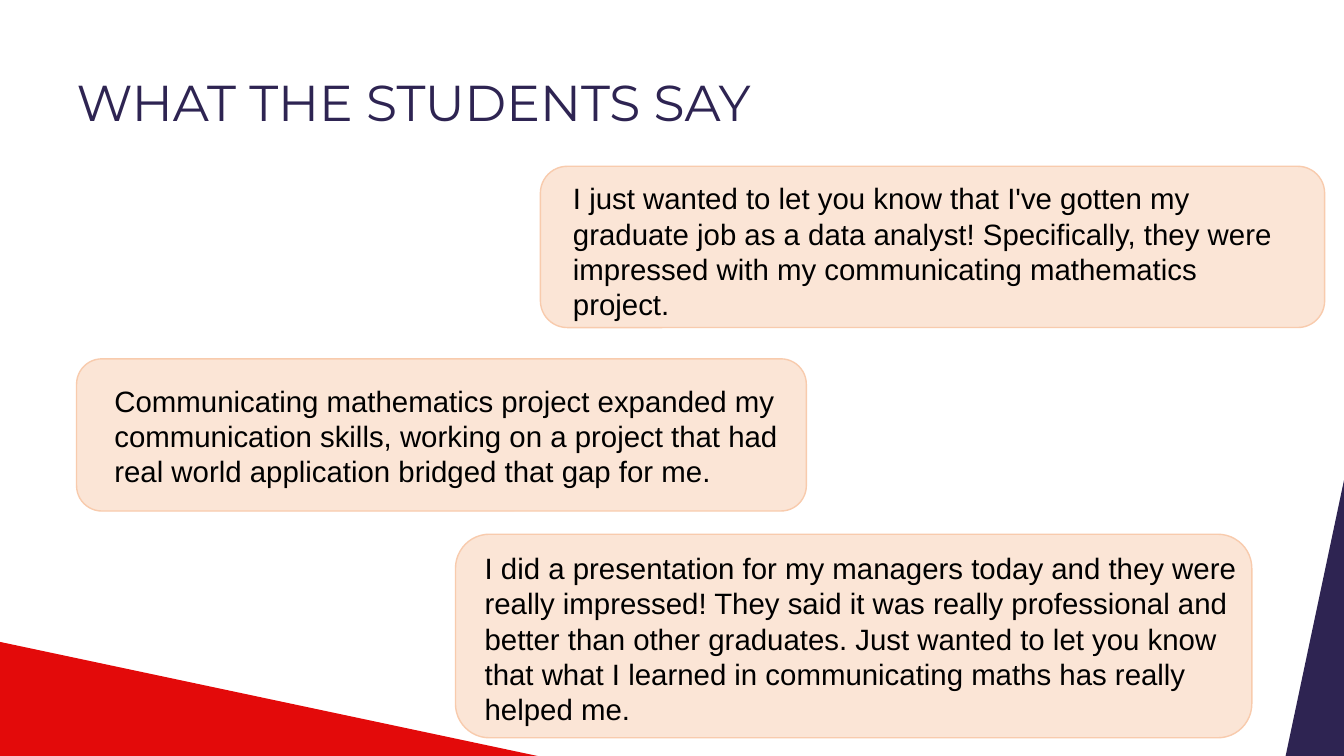
from dataclasses import dataclass

from pptx import Presentation
from pptx.dml.color import RGBColor
from pptx.enum.shapes import MSO_SHAPE
from pptx.enum.text import MSO_ANCHOR, MSO_AUTO_SIZE, PP_ALIGN
from pptx.slide import Slide
from pptx.text.text import TextFrame
from pptx.util import Pt


@dataclass(frozen=True)
class Theme:
    navy: str = "2E2452"
    red: str = "E30A0A"
    card: str = "FBE5D6"
    card_line: str = "F8CBAD"
    ink: str = "000000"
    title_font: str = "Montserrat"
    body_font: str = "Arial"
    title_size: float = 36
    body_size: float = 21


@dataclass(frozen=True)
class Box:
    left: float
    top: float
    width: float
    height: float

    def lengths(self) -> tuple[Pt, Pt, Pt, Pt]:
        return Pt(self.left), Pt(self.top), Pt(self.width), Pt(self.height)


@dataclass(frozen=True)
class Wedge:
    points: tuple[tuple[float, float], ...]
    color: str


@dataclass(frozen=True)
class Quote:
    card: Box
    text_box: Box
    text: str


THEME = Theme()
WIDTH, HEIGHT = 960, 540
TITLE_BOX = Box(54.7, 34.6, 800, 59.8)

WEDGES = (
    Wedge(((0, 458.5), (384, HEIGHT), (0, HEIGHT)), THEME.red),
    Wedge(((WIDTH, 343), (WIDTH, HEIGHT), (918.3, HEIGHT)), THEME.navy),
)

QUOTES = (
    Quote(
        Box(386, 118.8, 560.2, 115.2),
        Box(402.2, 125.3, 521.3, 108.7),
        "I just wanted to let you know that I've gotten my graduate job as a data "
        "analyst! Specifically, they were impressed with my communicating "
        "mathematics project.",
    ),
    Quote(
        Box(54.7, 256.3, 521.3, 108.7),
        Box(74.6, 270, 501.8, 83.5),
        "Communicating mathematics project expanded my communication skills, "
        "working on a project that had real world application bridged that gap "
        "for me.",
    ),
    Quote(
        Box(325.4, 381.6, 568.8, 145.4),
        Box(339.1, 389.5, 568.8, 134.6),
        "I did a presentation for my managers today and they were really "
        "impressed! They said it was really professional and better than other "
        "graduates. Just wanted to let you know that what I learned in "
        "communicating maths has really helped me.",
    ),
)


def write(tf: TextFrame, text: str, *, font: str, size: float, color: str,
          spacing: float = 1.0) -> None:
    tf.word_wrap = True
    p = tf.paragraphs[0]
    p.alignment = PP_ALIGN.LEFT
    p.line_spacing = spacing
    r = p.add_run()
    r.text = text
    r.font.name = font
    r.font.size = Pt(size)
    r.font.color.rgb = RGBColor.from_string(color)


def draw_wedge(s: Slide, wedge: Wedge) -> None:
    start, *rest = [(Pt(x), Pt(y)) for x, y in wedge.points]
    builder = s.shapes.build_freeform(*start)
    builder.add_line_segments(rest, close=True)
    sp = builder.convert_to_shape()
    sp.shadow.inherit = False
    sp.fill.solid()
    sp.fill.fore_color.rgb = RGBColor.from_string(wedge.color)
    sp.line.fill.background()


def draw_title(s: Slide, text: str) -> None:
    sp = s.shapes.title
    sp.left, sp.top, sp.width, sp.height = TITLE_BOX.lengths()
    tf = sp.text_frame
    tf.auto_size = MSO_AUTO_SIZE.NONE
    tf.vertical_anchor = MSO_ANCHOR.BOTTOM
    tf.margin_left = tf.margin_top = tf.margin_right = tf.margin_bottom = Pt(0)
    write(tf, text, font=THEME.title_font, size=THEME.title_size,
          color=THEME.navy, spacing=0.9)


def draw_quote(s: Slide, quote: Quote) -> None:
    sp = s.shapes.add_shape(MSO_SHAPE.ROUNDED_RECTANGLE, *quote.card.lengths())
    sp.shadow.inherit = False
    sp.fill.solid()
    sp.fill.fore_color.rgb = RGBColor.from_string(THEME.card)
    sp.line.color.rgb = RGBColor.from_string(THEME.card_line)
    sp.line.width = Pt(1)
    tf = s.shapes.add_textbox(*quote.text_box.lengths()).text_frame
    tf.auto_size = MSO_AUTO_SIZE.SHAPE_TO_FIT_TEXT
    write(tf, quote.text, font=THEME.body_font, size=THEME.body_size,
          color=THEME.ink)


def main() -> None:
    prs = Presentation()
    prs.slide_width, prs.slide_height = Pt(WIDTH), Pt(HEIGHT)
    s = prs.slides.add_slide(prs.slide_layouts[5])
    draw_title(s, "WHAT THE STUDENTS SAY")
    for wedge in WEDGES:
        draw_wedge(s, wedge)
    for quote in QUOTES:
        draw_quote(s, quote)
    prs.save("out.pptx")


if __name__ == "__main__":
    main()
